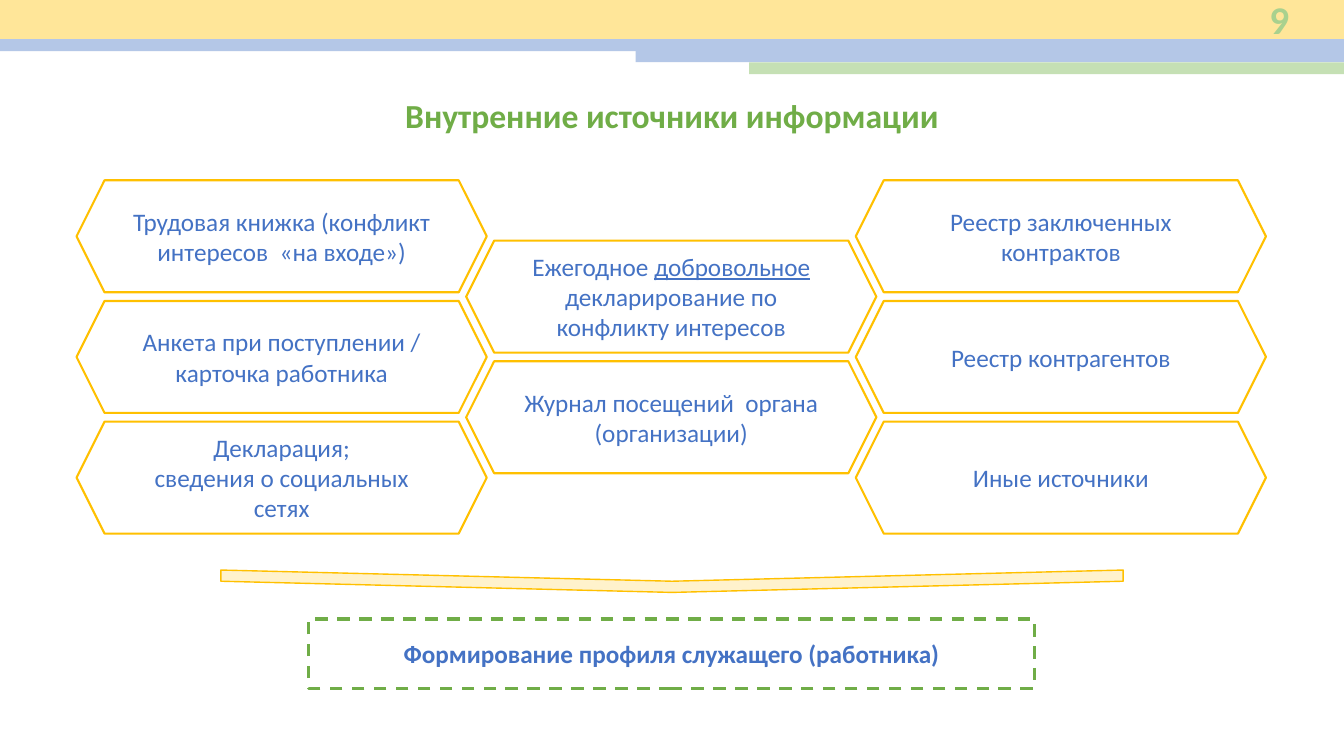
from pptx import Presentation
from pptx.dml.color import RGBColor
from pptx.enum.dml import MSO_LINE
from pptx.enum.shapes import MSO_SHAPE
from pptx.enum.text import MSO_ANCHOR, MSO_AUTO_SIZE, PP_ALIGN
from pptx.util import Pt

RECTANGLE, HEXAGON, CHEVRON = MSO_SHAPE.RECTANGLE, MSO_SHAPE.HEXAGON, MSO_SHAPE.CHEVRON
TOP, MIDDLE = MSO_ANCHOR.TOP, MSO_ANCHOR.MIDDLE
CENTER, RIGHT = PP_ALIGN.CENTER, PP_ALIGN.RIGHT
DASH = MSO_LINE.DASH
NO_AUTOFIT = MSO_AUTO_SIZE.NONE

FONT = "Calibri"
COLORS = {
    "yellow band": "FFE699",
    "blue band": "B4C7E7",
    "green band": "C5E0B4",
    "number": "A9D18E",
    "green": "70AD47",
    "gold": "FFC000",
    "cream": "FFF2CC",
    "blue": "4472C4",
}

TITLE = "Внутренние источники информации"
SLIDE_NUMBER = "9"
CONCLUSION = "Формирование профиля служащего (работника)"
UNDERLINED = "добровольное"
# One list per column; each source is a list of paragraphs.
SOURCE_COLUMNS = [
    [
        ["Трудовая книжка (конфликт интересов  «на входе»)"],
        ["Анкета при поступлении / карточка работника"],
        ["Декларация;", "сведения о социальных сетях"],
    ],
    [
        ["Ежегодное добровольное декларирование по конфликту интересов"],
        ["Журнал посещений  органа (организации)"],
    ],
    [
        ["Реестр заключенных контрактов"],
        ["Реестр контрагентов"],
        ["Иные источники"],
    ],
]

SLIDE_WIDTH, SLIDE_HEIGHT = 960, 540
# left, top, height, colour; every band runs to the right edge
HEADER_BANDS = [
    (0, 0, 28, "yellow band"),
    (0, 28, 8.5, "blue band"),
    (454, 36, 8.5, "blue band"),
    (535, 44.5, 8.5, "green band"),
]
HEXAGON_WIDTH, HEXAGON_HEIGHT = 293, 80
GRID_LEFT, GRID_TOP = 54.7, 128.8
COLUMN_STEP, ROW_STEP = 278.3, 86.2
BRACE_WIDTH, BRACE_HEIGHT, BRACE_TOP = 644.5, 16, 407.2


def color(name):
    return RGBColor.from_string(COLORS[name])


def add_shape(kind, left, top, width, height, fill=None, line=None, line_width=1.5):
    shape = slide.shapes.add_shape(kind, Pt(left), Pt(top), Pt(width), Pt(height))
    shape.shadow.inherit = False
    if fill:
        shape.fill.solid()
        shape.fill.fore_color.rgb = color(fill)
    else:
        shape.fill.background()
    if line:
        shape.line.color.rgb = color(line)
        shape.line.width = Pt(line_width)
    else:
        shape.line.fill.background()
    return shape


def write(shape, lines, size, font_color, bold=False, align=CENTER, anchor=MIDDLE):
    frame = shape.text_frame
    frame.word_wrap = True
    frame.auto_size = NO_AUTOFIT
    frame.vertical_anchor = anchor
    for index, line in enumerate(lines):
        paragraph = frame.add_paragraph() if index else frame.paragraphs[0]
        paragraph.alignment = align
        font = paragraph.font
        font.name, font.size, font.bold = FONT, Pt(size), bold
        font.color.rgb = color(font_color)
        before, marked, after = line.partition(UNDERLINED)
        for text in filter(None, (before, marked, after)):
            run = paragraph.add_run()
            run.text = text
            if text == UNDERLINED:
                run.font.underline = True


presentation = Presentation()
presentation.slide_width, presentation.slide_height = Pt(SLIDE_WIDTH), Pt(SLIDE_HEIGHT)
slide = presentation.slides.add_slide(presentation.slide_layouts[5])

for left, top, height, fill in HEADER_BANDS:
    add_shape(RECTANGLE, left, top, SLIDE_WIDTH - left, height, fill)

title = slide.shapes.title
title.left, title.top, title.width, title.height = Pt(43.2), Pt(64), Pt(873.6), Pt(36)
write(title, [TITLE], 24, "green", bold=True, anchor=TOP)

number_box = slide.shapes.add_textbox(Pt(857), Pt(0), Pt(71), Pt(27.5))
write(number_box, [SLIDE_NUMBER], 28, "number", bold=True, align=RIGHT)

most_rows = max(len(sources) for sources in SOURCE_COLUMNS)
for column, sources in enumerate(SOURCE_COLUMNS):
    left = GRID_LEFT + column * COLUMN_STEP
    column_top = GRID_TOP + (most_rows - len(sources)) * ROW_STEP / 2
    for row, lines in enumerate(sources):
        hexagon = add_shape(HEXAGON, left, column_top + row * ROW_STEP,
                            HEXAGON_WIDTH, HEXAGON_HEIGHT, line="gold")
        write(hexagon, lines, 18, "blue")

# The chevron is placed upright, then turned about its centre to point down.
brace = add_shape(CHEVRON, (SLIDE_WIDTH - BRACE_HEIGHT) / 2,
                  BRACE_TOP + (BRACE_HEIGHT - BRACE_WIDTH) / 2,
                  BRACE_HEIGHT, BRACE_WIDTH, "cream", "gold", 1)
brace.rotation = 90

conclusion_box = add_shape(RECTANGLE, 220.5, 442.2, 518.5, 49.5, line="green", line_width=2.25)
conclusion_box.line.dash_style = DASH
write(conclusion_box, [CONCLUSION], 18, "blue", bold=True)

presentation.save("out.pptx")
